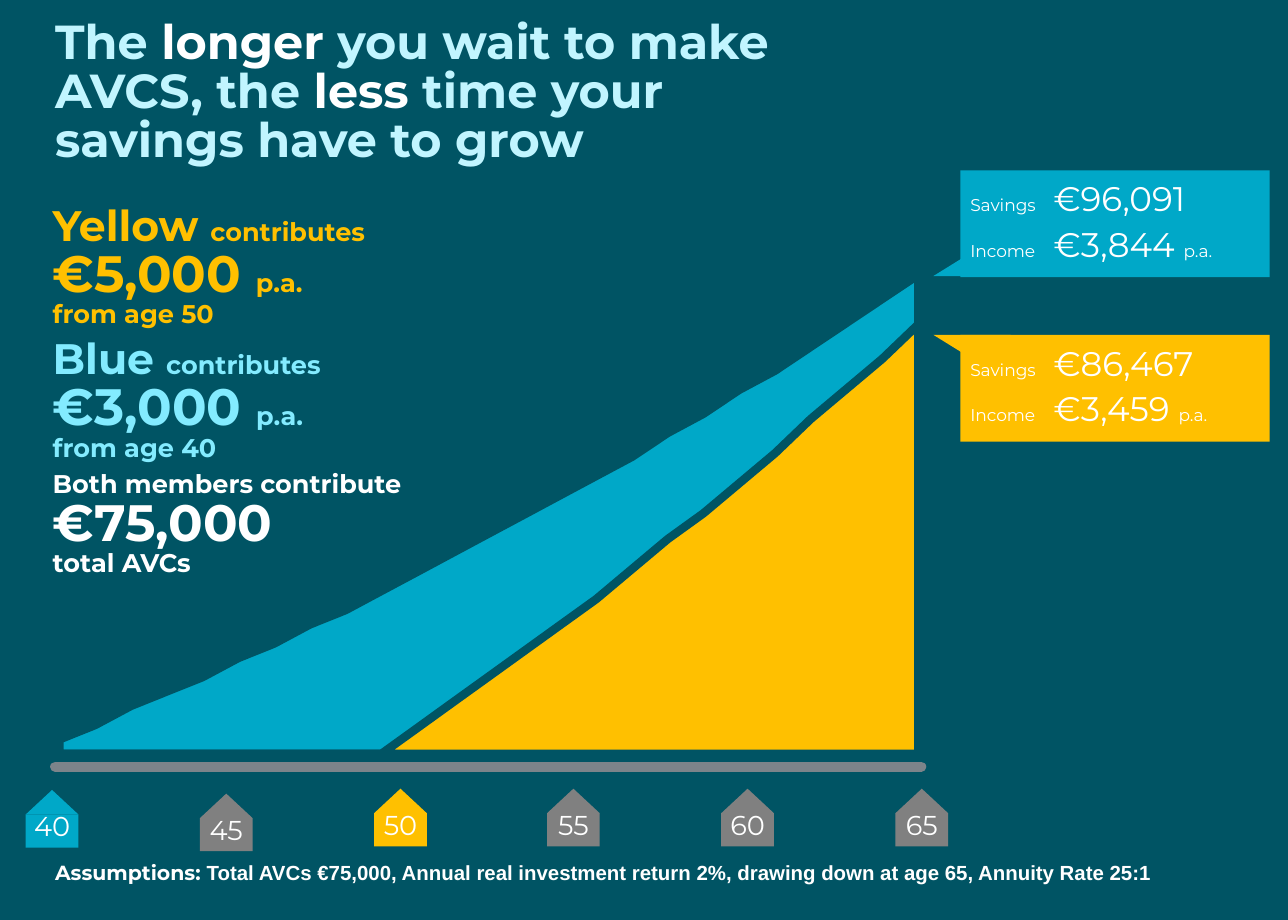
from copy import deepcopy
from lxml.etree import SubElement as Sub
from pptx import Presentation
from pptx.chart.data import CategoryChartData as Data
from pptx.dml.color import RGBColor as Rgb
from pptx.enum.chart import XL_CHART_TYPE as Kind
from pptx.enum.shapes import MSO_CONNECTOR as Link, MSO_SHAPE as Form
from pptx.enum.text import MSO_ANCHOR as Anchor, MSO_AUTO_SIZE as Fit, PP_ALIGN as Align
from pptx.oxml.ns import qn
from pptx.util import Pt

SCALE = 9144
BACK, BLUE, GOLD, GREY = "005464", "00A8C8", "FFC000", "808080"
PALE, SKY, WHITE = "C1F5FF", "83EBFF", "FFFFFF"


def px(*sizes):
    return [size * SCALE for size in sizes]


def paint(format, shade):
    format.solid()
    format.fore_color.rgb = Rgb.from_string(shade)


def write(frame, paras, bold=False, align=Align.LEFT, before=0, tab=None,
          inset=(0, 0, 0, 0), anchor=Anchor.TOP):
    frame.word_wrap = True
    frame.auto_size = Fit.NONE
    frame.vertical_anchor = anchor
    (frame.margin_left, frame.margin_top,
     frame.margin_right, frame.margin_bottom) = px(*inset)
    for index, runs in enumerate(paras):
        para = frame.add_paragraph() if index else frame.paragraphs[0]
        para.alignment = align
        para.line_spacing = 0.86
        para.space_before = Pt(before)
        if tab:
            stops = Sub(para._p.get_or_add_pPr(), qn("a:tabLst"))
            Sub(stops, qn("a:tab"), pos=str(tab * SCALE), algn="l")
        for text, size, shade, *face in runs:
            for part, line in enumerate(text.split("\n")):
                if part:
                    para.add_line_break()
                    para._p[-1].append(deepcopy(run._r.rPr))
                if line:
                    run = para.add_run()
                    run.text = line
                    font = run.font
                    font.name = face[0] if face else "Montserrat"
                    font.size, font.bold = Pt(size), bold
                    paint(font.fill, shade)


class Board:
    def __init__(self, deck):
        self.slide = deck.slides.add_slide(deck.slide_layouts[5])
        self.shapes = self.slide.shapes
        paint(self.slide.background.fill, BACK)

    def title(self, box, runs):
        head = self.shapes.title
        head.left, head.top, head.width, head.height = px(*box)
        write(head.text_frame, [runs], bold=True)

    def text(self, box, paras, **style):
        write(self.shapes.add_textbox(*px(*box)).text_frame, paras, **style)

    def finish(self, shape, shade):
        paint(shape.fill, shade)
        shape.line.fill.background()
        shape.shadow.inherit = False
        return shape

    def block(self, form, box, shade):
        return self.finish(self.shapes.add_shape(form, *px(*box)), shade)

    def marker(self, left, top, age, shade):
        roof = self.block(Form.ISOSCELES_TRIANGLE, (left, top, 43, 20), shade)
        body = self.block(Form.RECTANGLE, (left, top + 20, 43, 27), shade)
        write(body.text_frame, [[(str(age), 16, WHITE)]], align=Align.CENTER)
        self.shapes.add_group_shape([roof, body])

    def callout(self, top, tip, bend, shade, savings, income):
        pen = self.shapes.build_freeform(761, tip, SCALE)
        pen.add_line_segments([(824, tip), (824, tip + bend)])
        tail = self.finish(pen.convert_to_shape(), shade)
        body = self.block(Form.RECTANGLE, (783, top, 252, 87), shade)
        write(body.text_frame, [
            [("Savings", 10, WHITE), ("\t" + savings, 20, WHITE)],
            [("Income\t", 10, WHITE), (income + " ", 20, WHITE), ("p.a.", 10, WHITE)],
        ], before=6, tab=68, inset=(8, 0, 8, 0), anchor=Anchor.MIDDLE)
        self.shapes.add_group_shape([tail, body])

    def area(self, box, values, top, shade):
        data = Data()
        data.categories = [str(year) for year in range(1, 26)]
        data.add_series("Series 1", values)
        chart = self.shapes.add_chart(Kind.AREA, *px(*box), data).chart
        chart.has_legend = chart.has_title = False
        chart.font.name, chart.font.size = "Arial", Pt(18)
        paint(chart.font.fill, "000000")
        axis = chart.value_axis
        axis.minimum_scale, axis.maximum_scale = 0, top
        axis.has_major_gridlines = False
        axis.visible = chart.category_axis.visible = False
        form = chart.plots[0].series[0].format
        paint(form.fill, shade)
        paint(form.line.fill, BACK)
        form.line.width = Pt(5)
        root = chart._chartSpace
        root.xpath(".//c:crossBetween")[0].set("val", "midCat")
        plot = root.xpath(".//c:plotArea")[0]
        for old in plot.findall(qn("c:layout")):
            plot.remove(old)
        layout = Sub(plot, qn("c:layout"))
        plot.insert(0, layout)
        manual = Sub(layout, qn("c:manualLayout"))
        for key, value in (("layoutTarget", "inner"), ("xMode", "edge"), ("yMode", "edge"),
                           ("x", "0"), ("y", "0"), ("w", "1"), ("h", "0.98")):
            Sub(manual, qn("c:" + key), val=value)

    def line(self, start, end, shade, width):
        rule = self.shapes.add_connector(Link.STRAIGHT, *px(*start, *end))
        paint(rule.line.fill, shade)
        rule.line.width = Pt(width)
        rule.line._ln.set("cap", "rnd")
        Sub(rule._element.spPr, qn("a:effectLst"))


def main():
    deck = Presentation()
    deck.slide_width, deck.slide_height = px(1050, 750)
    board = Board(deck)

    early = [3, 6, 10, 13, 16, 20, 23, 27, 30, 34, 38, 42, 46,
             50, 54, 58, 62, 67, 71, 76, 80, 85, 90, 95, 100]
    late = [None] * 10 + [6, 12, 18, 24, 30, 36, 43, 50, 56, 63, 70, 78, 85, 92, 100]
    for values, top, shade in ((early, 130, BLUE), (late, 145, GOLD)):
        board.area((45, 107, 707, 518), values, top, shade)

    members = [
        [(name + " ", 25, shade), ("contributes\n", 15, shade),
         (amount + " ", 30, shade), (f"p.a.\nfrom age {age}", 15, shade)]
        for name, amount, age, shade in (("Yellow", "€5,000", 50, GOLD),
                                         ("Blue", "€3,000", 40, SKY))
    ]
    total = [("Both members contribute\n", 15, WHITE), ("€75,000\n", 30, WHITE),
             ("total AVCs", 15, WHITE)]
    board.text((43, 168, 649, 358), members + [total], bold=True, before=6)

    board.line((751, 625), (45, 625), "7C848A", 6)
    board.title((45, 16, 649, 154), [
        ("The ", 28, PALE), ("longer", 28, WHITE), (" you wait to make AVCS, the ", 28, PALE),
        ("less", 28, WHITE), (" time your savings have to grow", 28, PALE)])

    starts = {40: (644, BLUE), 45: (647, GREY), 50: (643, GOLD)}
    for step, age in enumerate(range(40, 66, 5)):
        top, shade = starts.get(age, (643, GREY))
        board.marker(21 + round(141.8 * step), top, age, shade)

    board.callout(139, 225, -39, BLUE, "€96,091", "€3,844")
    board.callout(273, 273, 39, GOLD, "€86,467", "€3,459")

    board.text((45, 688, 961, 55), [[
        ("Assumptions: ", 12, WHITE),
        ("Total AVCs €75,000, Annual real investment return 2%, "
         "drawing down at age 65, Annuity Rate 25:1", 12, WHITE, "Arial"),
    ]], bold=True, inset=(0, 16, 0, 0))
    deck.save("out.pptx")


if __name__ == "__main__":
    main()
